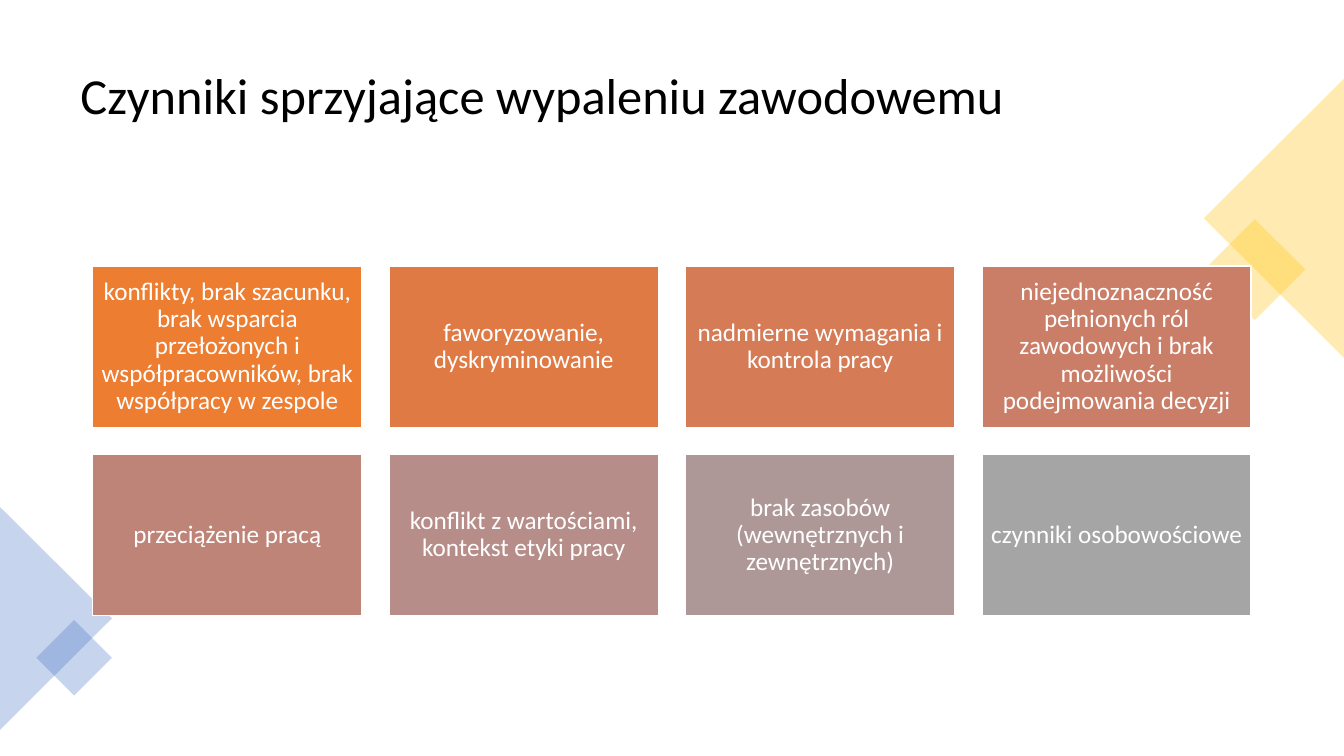
import lxml.etree
import pptx
import pptx.dml.color
import pptx.enum.shapes
import pptx.enum.text
import pptx.oxml.ns
import pptx.util

Inches = pptx.util.Inches
Pt = pptx.util.Pt
RGBColor = pptx.dml.color.RGBColor
Preset = pptx.enum.shapes.MSO_SHAPE
Align = pptx.enum.text.PP_ALIGN

BLACK = RGBColor(0x00, 0x00, 0x00)
WHITE = RGBColor(0xFF, 0xFF, 0xFF)
GOLD = RGBColor(0xFF, 0xC0, 0x00)
BLUE = RGBColor(0x44, 0x72, 0xC4)

FONT = "Calibri"
TITLE = "Czynniki sprzyjające wypaleniu zawodowemu"
COLUMNS = 4
CARD_WIDTH, CARD_HEIGHT, CARD_GAP = 2.67, 1.6, 0.27
FACTORS = [
    ("konflikty, brak szacunku, brak wsparcia przełożonych i "
     "współpracowników, brak współpracy w zespole", RGBColor(0xED, 0x7D, 0x31)),
    ("faworyzowanie, dyskryminowanie", RGBColor(0xE0, 0x7A, 0x44)),
    ("nadmierne wymagania i kontrola pracy", RGBColor(0xD5, 0x7B, 0x56)),
    ("niejednoznaczność pełnionych ról zawodowych i brak możliwości "
     "podejmowania decyzji", RGBColor(0xCA, 0x7E, 0x67)),
    ("przeciążenie pracą", RGBColor(0xBF, 0x84, 0x78)),
    ("konflikt z wartościami, kontekst etyki pracy", RGBColor(0xB6, 0x8D, 0x88)),
    ("brak zasobów (wewnętrznych i zewnętrznych)", RGBColor(0xAD, 0x98, 0x97)),
    ("czynniki osobowościowe", RGBColor(0xA5, 0xA5, 0xA5)),
]


def write_text(shape, text, size, color, alignment):
    """Fill a shape with one vertically centred paragraph."""
    frame = shape.text_frame
    frame.word_wrap = True
    frame.vertical_anchor = pptx.enum.text.MSO_ANCHOR.MIDDLE
    paragraph = frame.paragraphs[0]
    paragraph.alignment = alignment
    paragraph.line_spacing = 0.9
    run = paragraph.add_run()
    run.text = text
    run.font.name = FONT
    run.font.size = Pt(size)
    run.font.color.rgb = color


def add_filled_shape(slide, preset, box, color):
    shape = slide.shapes.add_shape(preset, *(Inches(length) for length in box))
    shape.shadow.inherit = False
    shape.fill.solid()
    shape.fill.fore_color.rgb = color
    return shape


def add_accent(slide, preset, box, rotation, color):
    """Add a rotated, mostly transparent shape without an outline."""
    shape = add_filled_shape(slide, preset, box, color)
    shape.rotation = rotation
    shape.line.fill.background()
    color_element = shape.fill._xPr.find(".//" + pptx.oxml.ns.qn("a:srgbClr"))
    alpha = lxml.etree.SubElement(color_element, pptx.oxml.ns.qn("a:alpha"))
    alpha.set("val", "30000")


def add_title(slide, box):
    title = slide.shapes.add_textbox(*(Inches(length) for length in box))
    write_text(title, TITLE, 36, BLACK, Align.LEFT)


def add_corner_accents(slide):
    add_accent(slide, Preset.RECTANGLE, (12.09, 2.32, 0.71, 0.71), 45, GOLD)
    add_accent(slide, Preset.ISOSCELES_TRIANGLE, (11.25, 1.47, 2.77, 1.39), 270, GOLD)
    add_accent(slide, Preset.ISOSCELES_TRIANGLE, (-0.55, 5.58, 2.21, 1.11), 90, BLUE)
    add_accent(slide, Preset.RECTANGLE, (0.47, 6.26, 0.53, 0.53), 45, BLUE)


def add_factor_card(slide, box, text, color):
    card = add_filled_shape(slide, Preset.RECTANGLE, box, color)
    card.line.color.rgb = WHITE
    card.line.width = Pt(1)
    frame = card.text_frame
    frame.margin_left = frame.margin_right = Inches(0.07)
    frame.margin_top = frame.margin_bottom = Inches(0.07)
    write_text(card, text, 18, WHITE, Align.CENTER)


def add_factor_grid(slide, left, top):
    for index, (text, color) in enumerate(FACTORS):
        row, column = divmod(index, COLUMNS)
        box = (left + column * (CARD_WIDTH + CARD_GAP),
               top + row * (CARD_HEIGHT + CARD_GAP),
               CARD_WIDTH, CARD_HEIGHT)
        add_factor_card(slide, box, text, color)


def main():
    presentation = pptx.Presentation()
    presentation.slide_width = Inches(13.33)
    presentation.slide_height = Inches(7.5)
    slide = presentation.slides.add_slide(presentation.slide_layouts[6])
    slide.background.fill.solid()
    slide.background.fill.fore_color.rgb = WHITE
    add_title(slide, (0.7, 0.35, 11.93, 1.24))
    add_corner_accents(slide)
    add_factor_grid(slide, 0.92, 2.64)
    presentation.save("out.pptx")


if __name__ == "__main__":
    main()
